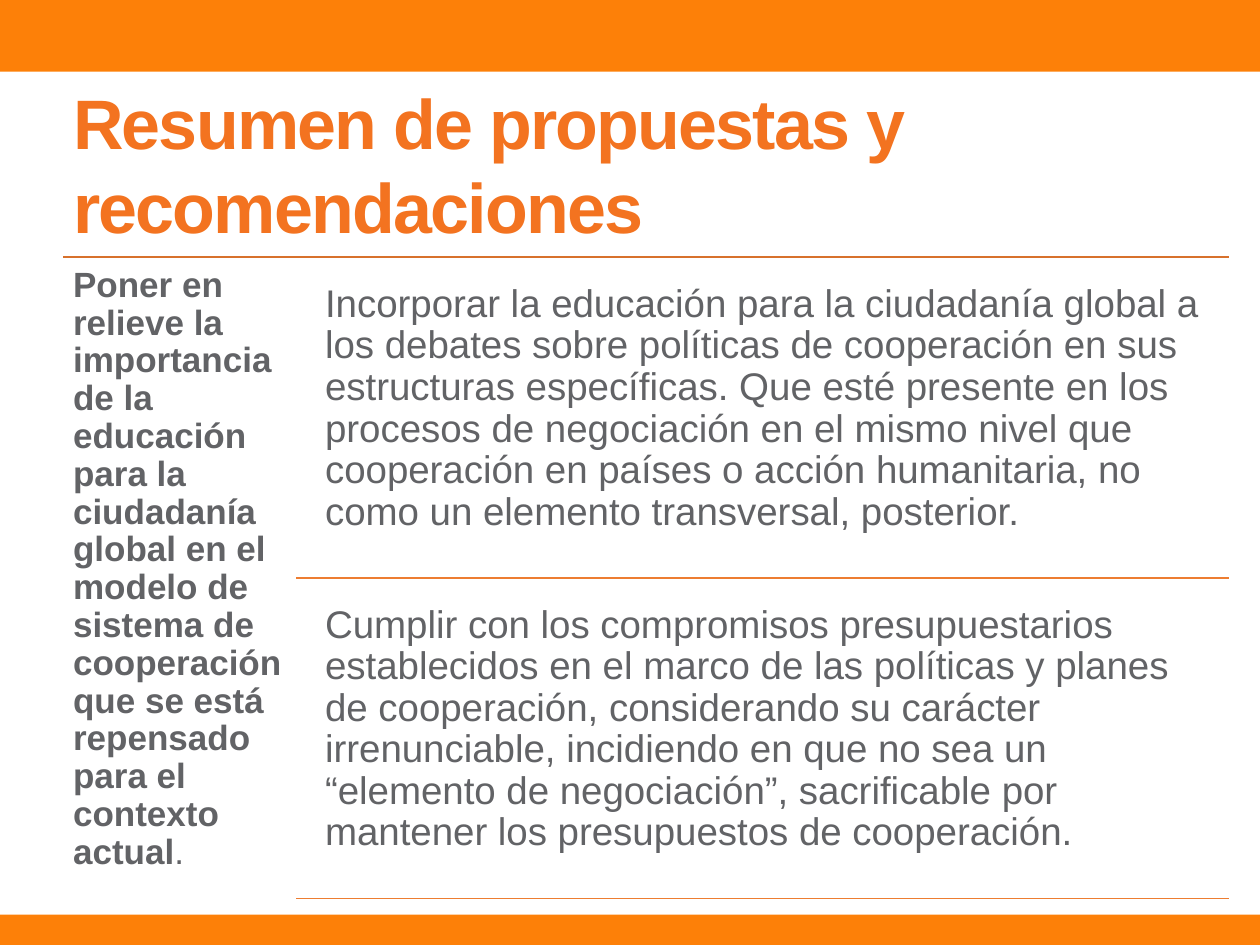
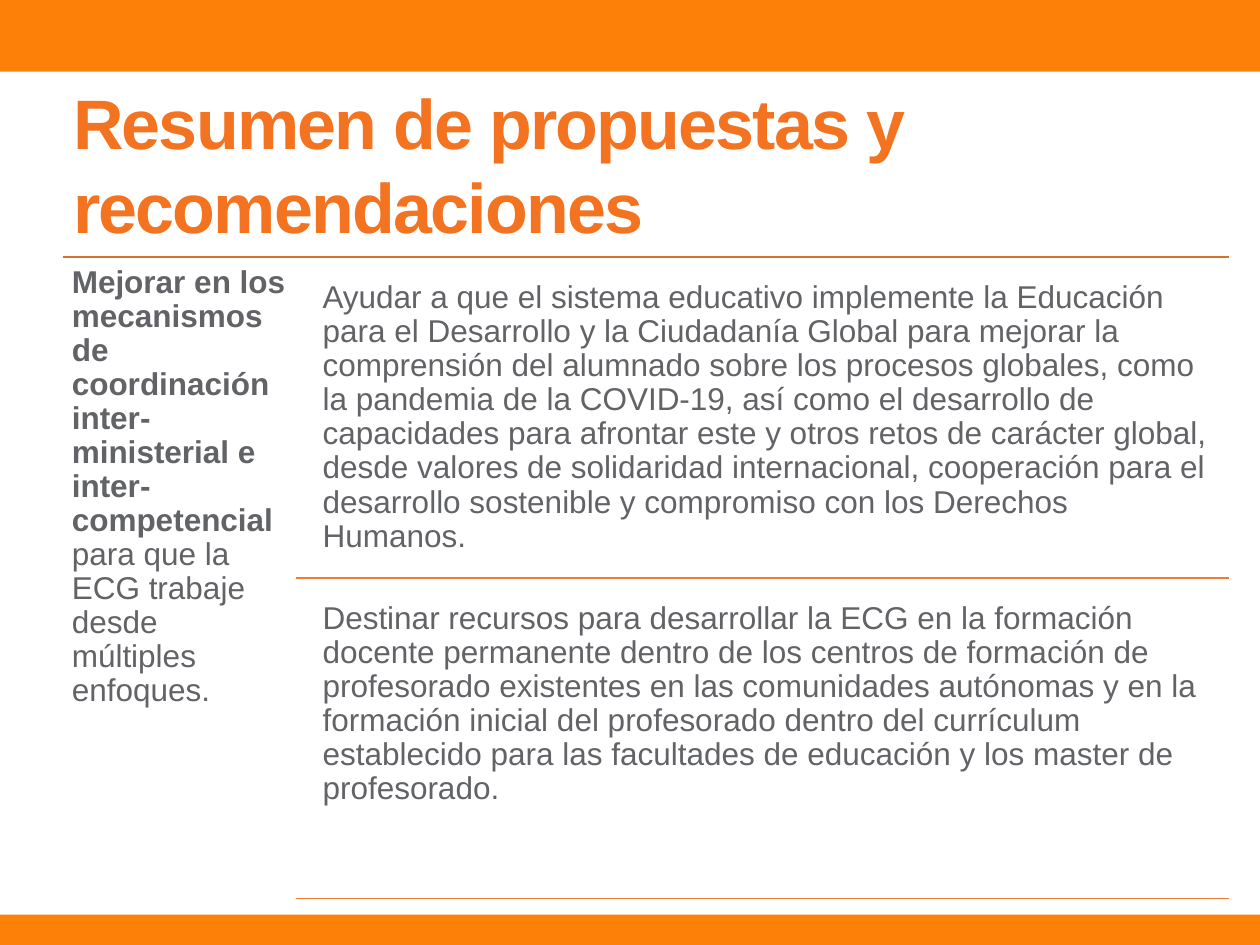
from dataclasses import dataclass

from lxml import etree
from pptx import Presentation
from pptx import util as u
from pptx.dml.color import RGBColor
from pptx.enum import shapes, text
from pptx.oxml.ns import qn

TITLE = "Resumen de propuestas y recomendaciones"

SLIDES = [
    {
        "topic": [
            ("Poner en relieve la importancia de la educación para la ciudadanía global en el "
             "modelo de sistema de cooperación que se está repensado para el contexto actual", True),
            (".", False),
        ],
        "proposals": [
            "Incorporar la educación para la ciudadanía global a los debates sobre políticas de "
            "cooperación en sus estructuras específicas. Que esté presente en los procesos de "
            "negociación en el mismo nivel que cooperación en países o acción humanitaria, no como "
            "un elemento transversal, posterior.",
            "Cumplir con los compromisos presupuestarios establecidos en el marco de las políticas "
            "y planes de cooperación, considerando su carácter irrenunciable, incidiendo en que no "
            "sea un “elemento de negociación”, sacrificable por mantener los presupuestos de "
            "cooperación.",
        ],
        "topic_size": 20, "proposal_size": 22, "topic_inset": 0.08, "proposal_inset": 0.09,
    },
    {
        "topic": [
            ("Mejorar en los mecanismos de coordinación inter-ministerial e inter-competencial ", True),
            ("para que la ECG trabaje desde múltiples enfoques.", False),
        ],
        "proposals": [
            "Ayudar a que el sistema educativo implemente la Educación para el Desarrollo y la "
            "Ciudadanía Global para mejorar la comprensión del alumnado sobre los procesos "
            "globales, como la pandemia de la COVID-19, así como el desarrollo de capacidades para "
            "afrontar este y otros retos de carácter global, desde valores de solidaridad "
            "internacional, cooperación para el desarrollo sostenible y compromiso con los "
            "Derechos Humanos.",
            "Destinar recursos para desarrollar la ECG en la formación docente permanente dentro "
            "de los centros de formación de profesorado existentes en las comunidades autónomas y "
            "en la formación inicial del profesorado dentro del currículum establecido para las "
            "facultades de educación y los master de profesorado.",
        ],
        "topic_size": 18, "proposal_size": 18, "topic_inset": 0.07, "proposal_inset": 0.07,
    },
]


@dataclass(frozen=True)
class Theme:
    font: str = "Arial"
    band: str = "FD8008"
    title: str = "F37320"
    body: str = "626366"
    top_rule: str = "D7712C"
    row_rule: str = "ED7D31"
    title_size: int = 40
    title_tracking: int = -100
    rule_width: int = 1
    line_spacing: float = 0.9


THEME = Theme()
WIDTH, HEIGHT = 10, 7.5
TOP_BAND, BOTTOM_BAND = 0.57, 0.24
LEFT, RIGHT, BODY_TOP = 0.5, 9.75, 2.04
BODY_HEIGHT = 5.21
TOPIC_WIDTH = (RIGHT - LEFT) / 5
ROW_LEFT = LEFT + TOPIC_WIDTH
ROW_INDENT = 0.14
ROW_GAP, ROW_HEIGHT = 0.125, 2.42


def color(value):
    return RGBColor.from_string(value)


def add_band(slide, top, height):
    band = slide.shapes.add_shape(
        shapes.MSO_SHAPE.RECTANGLE, 0, u.Inches(top), u.Inches(WIDTH), u.Inches(height))
    band.shadow.inherit = False
    band.fill.solid()
    band.fill.fore_color.rgb = color(THEME.band)
    band.line.fill.background()


def add_rule(slide, left, top, line_color):
    rule = slide.shapes.add_connector(
        shapes.MSO_CONNECTOR.STRAIGHT,
        u.Inches(left), u.Inches(top), u.Inches(RIGHT), u.Inches(top))
    rule.line.color.rgb = color(line_color)
    rule.line.width = u.Pt(THEME.rule_width)
    etree.SubElement(rule._element.spPr, qn("a:effectLst"))


def add_text(slide, box, runs, size, font_color, insets, spacing=None):
    frame = slide.shapes.add_textbox(*map(u.Inches, box)).text_frame
    frame.word_wrap = True
    frame.vertical_anchor = text.MSO_ANCHOR.TOP
    frame.margin_left = frame.margin_right = u.Inches(insets[0])
    frame.margin_top = frame.margin_bottom = u.Inches(insets[1])
    paragraph = frame.paragraphs[0]
    paragraph.line_spacing = spacing
    for words, bold in runs:
        run = paragraph.add_run()
        run.text = words
        run.font.name = THEME.font
        run.font.size = u.Pt(size)
        run.font.bold = bold
        run.font.color.rgb = color(font_color)
    return paragraph


def add_body(slide, box, runs, size, inset):
    add_text(slide, box, runs, size, THEME.body, (inset, inset), THEME.line_spacing)


def add_frame(slide):
    add_band(slide, 0, TOP_BAND)
    add_band(slide, HEIGHT - BOTTOM_BAND, BOTTOM_BAND)
    title = add_text(slide, (LEFT, 0.58, 9, 1.08), [(TITLE, True)],
                     THEME.title_size, THEME.title, (0.08, 0.05))
    title.runs[0].font._element.set("spc", str(THEME.title_tracking))
    add_rule(slide, LEFT, BODY_TOP, THEME.top_rule)


def build_slide(presentation, content):
    slide = presentation.slides.add_slide(presentation.slide_layouts[6])
    add_frame(slide)
    add_body(slide, (LEFT, BODY_TOP, TOPIC_WIDTH, BODY_HEIGHT),
             content["topic"], content["topic_size"], content["topic_inset"])
    text_left = ROW_LEFT + ROW_INDENT
    for row, proposal in enumerate(content["proposals"]):
        top = BODY_TOP + ROW_GAP + row * (ROW_HEIGHT + ROW_GAP)
        add_body(slide, (text_left, top, RIGHT - text_left, ROW_HEIGHT),
                 [(proposal, False)], content["proposal_size"], content["proposal_inset"])
        add_rule(slide, ROW_LEFT, top + ROW_HEIGHT, THEME.row_rule)


def main():
    presentation = Presentation()
    presentation.slide_width = u.Inches(WIDTH)
    presentation.slide_height = u.Inches(HEIGHT)
    for content in SLIDES:
        build_slide(presentation, content)
    presentation.save("out.pptx")


if __name__ == "__main__":
    main()
